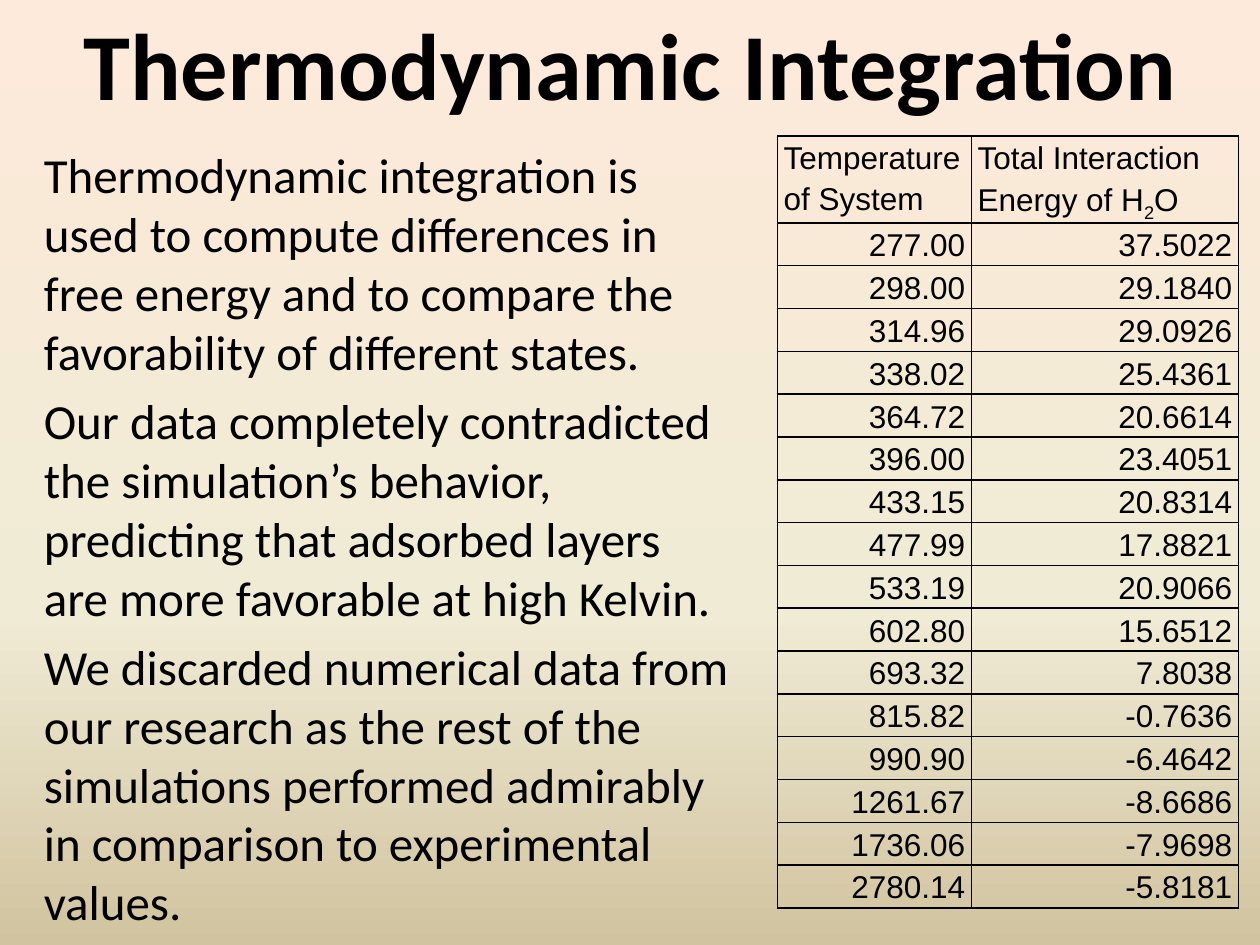
from copy import deepcopy
from dataclasses import dataclass

from lxml import etree
from pptx import Presentation
from pptx.dml.color import RGBColor
from pptx.enum.text import PP_ALIGN
from pptx.oxml.ns import qn
from pptx.util import Inches, Pt

LEFT, CENTER, RIGHT = PP_ALIGN.LEFT, PP_ALIGN.CENTER, PP_ALIGN.RIGHT
BLACK = "000000"
BACKDROP = [(0, "FDEADA"), (0.65, "F0EBD5"), (1, "D1C39F")]
COLUMN_WIDTHS = [1.54, 2.12]
HEADER_HEIGHT, ROW_HEIGHT = 0.67, 0.34
CELL_MARGINS = {"margin_left": Inches(0.05), "margin_right": Inches(0.05),
                "margin_top": 0, "margin_bottom": 0}
HEADINGS = [["Temperature of System"], ["Total Interaction Energy of H", "2", "O"]]
ENERGIES = [
    ("277.00", "37.5022"), ("298.00", "29.1840"), ("314.96", "29.0926"),
    ("338.02", "25.4361"), ("364.72", "20.6614"), ("396.00", "23.4051"),
    ("433.15", "20.8314"), ("477.99", "17.8821"), ("533.19", "20.9066"),
    ("602.80", "15.6512"), ("693.32", "7.8038"), ("815.82", "-0.7636"),
    ("990.90", "-6.4642"), ("1261.67", "-8.6686"), ("1736.06", "-7.9698"),
    ("2780.14", "-5.8181"),
]
FINDINGS = [
    "Thermodynamic integration is used to compute differences in free energy "
    "and to compare the favorability of different states.",
    "Our data completely contradicted the simulation’s behavior, predicting "
    "that adsorbed layers are more favorable at high Kelvin.",
    "We discarded numerical data from our research as the rest of the "
    "simulations performed admirably in comparison to experimental values.",
]


@dataclass
class TextBlock:
    left: float
    top: float
    width: float
    height: float
    paragraphs: list[str]
    font: dict
    layout: dict


BLOCKS = [
    TextBlock(0, 0, 10, 1.01, ["Thermodynamic Integration"],
              {"name": "Calibri", "size": Pt(54), "bold": True},
              {"alignment": CENTER}),
    TextBlock(0.25, 1.1, 5.67, 6.4, FINDINGS,
              {"name": "Calibri", "size": Pt(28)},
              {"alignment": LEFT, "space_before": Pt(6)}),
]


def rgb(code: str) -> RGBColor:
    return RGBColor.from_string(code)


def apply(target, values: dict) -> None:
    for name, value in values.items():
        setattr(target, name, value)


def write(paragraph, pieces: list[str], font: dict, layout: dict) -> None:
    apply(paragraph, layout)
    for piece in pieces:
        run = paragraph.add_run()
        run.text = piece
        apply(run.font, font)
        run.font.color.rgb = rgb(BLACK)


def paint_backdrop(slide) -> None:
    fill = slide.background.fill
    fill.gradient()
    fill.gradient_angle = 270
    stop_list = slide.element.find(".//" + qn("a:gsLst"))
    stop_list.append(deepcopy(stop_list[-1]))
    for stop, (position, color) in zip(fill.gradient_stops, BACKDROP):
        stop.position = position
        stop.color.rgb = rgb(color)


def add_block(slide, block: TextBlock) -> None:
    frame = slide.shapes.add_textbox(
        Inches(block.left), Inches(block.top),
        Inches(block.width), Inches(block.height)).text_frame
    frame.word_wrap = True
    for index, sentence in enumerate(block.paragraphs):
        paragraph = frame.add_paragraph() if index else frame.paragraphs[0]
        write(paragraph, [sentence], block.font, block.layout)


def outline(cell) -> None:
    properties = cell._tc.get_or_add_tcPr()
    for position, side in enumerate(("lnL", "lnR", "lnT", "lnB")):
        line = etree.Element(qn(f"a:{side}"), w=str(Pt(1)))
        solid = etree.SubElement(line, qn("a:solidFill"))
        etree.SubElement(solid, qn("a:srgbClr"), val=BLACK)
        properties.insert(position, line)


def fill_cell(cell, pieces: list[str], alignment) -> None:
    apply(cell, CELL_MARGINS)
    cell.fill.background()
    outline(cell)
    write(cell.text_frame.paragraphs[0], pieces,
          {"name": "Arial", "size": Pt(18)},
          {"alignment": alignment, "line_spacing": 1.15})


def add_energy_table(slide) -> None:
    height = HEADER_HEIGHT + ROW_HEIGHT * len(ENERGIES)
    table = slide.shapes.add_table(
        len(ENERGIES) + 1, len(COLUMN_WIDTHS), Inches(6.17), Inches(1.08),
        Inches(sum(COLUMN_WIDTHS)), Inches(height)).table
    apply(table, {"first_row": False, "horz_banding": False})
    for column, width in zip(table.columns, COLUMN_WIDTHS):
        column.width = Inches(width)
    for index, row in enumerate(table.rows):
        row.height = Inches(ROW_HEIGHT if index else HEADER_HEIGHT)
    for column, heading in enumerate(HEADINGS):
        fill_cell(table.cell(0, column), heading, LEFT)
    subscript = table.cell(0, 1).text_frame.paragraphs[0].runs[1]
    subscript.font._element.set("baseline", "-25000")
    for index, readings in enumerate(ENERGIES, 1):
        for column, reading in enumerate(readings):
            fill_cell(table.cell(index, column), [reading], RIGHT)


def main() -> None:
    deck = Presentation()
    apply(deck, {"slide_width": Inches(10), "slide_height": Inches(7.5)})
    slide = deck.slides.add_slide(deck.slide_layouts[6])
    paint_backdrop(slide)
    add_energy_table(slide)
    for block in BLOCKS:
        add_block(slide, block)
    deck.save("out.pptx")


if __name__ == "__main__":
    main()
